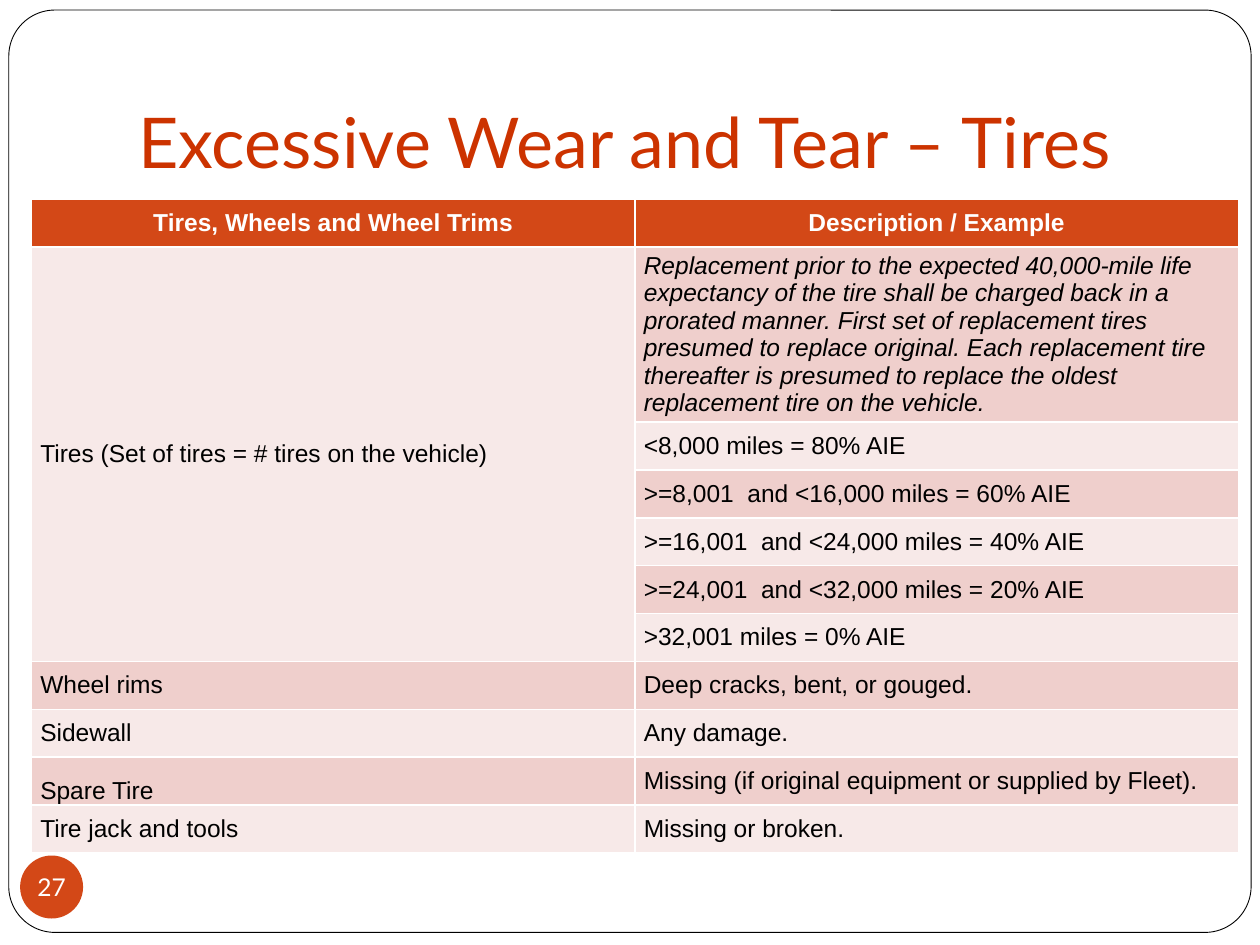
from dataclasses import dataclass

from pptx import Presentation
from pptx.dml.color import RGBColor
from pptx.enum.shapes import MSO_SHAPE
from pptx.enum.text import MSO_ANCHOR, PP_ALIGN
from pptx.util import Inches, Pt

ROUNDED, OVAL = MSO_SHAPE.ROUNDED_RECTANGLE, MSO_SHAPE.OVAL
MIDDLE, BOTTOM = MSO_ANCHOR.MIDDLE, MSO_ANCHOR.BOTTOM
LEFT, CENTER = PP_ALIGN.LEFT, PP_ALIGN.CENTER


@dataclass(frozen=True)
class Theme:
    white: RGBColor = RGBColor(0xFF, 0xFF, 0xFF)
    black: RGBColor = RGBColor(0, 0, 0)
    accent: RGBColor = RGBColor(0xD3, 0x48, 0x17)
    title: RGBColor = RGBColor(0xCC, 0x33, 0x00)
    dark_band: RGBColor = RGBColor(0xEF, 0xCF, 0xCC)
    light_band: RGBColor = RGBColor(0xF7, 0xE9, 0xE8)
    heading_font: str = "Lato"
    body_font: str = "Arial"
    title_size: int = 40
    body_size: int = 14


THEME = Theme()

HEADERS = ("Tires, Wheels and Wheel Trims", "Description / Example")
TIRES = "Tires (Set of tires = # tires on the vehicle)"
REPLACEMENT = (
    "Replacement prior to the expected 40,000-mile life expectancy of the tire "
    "shall be charged back in a prorated manner. First set of replacement tires "
    "presumed to replace original. Each replacement tire thereafter is presumed "
    "to replace the oldest replacement tire on the vehicle."
)
MILEAGE = (
    "<8,000 miles = 80% AIE",
    ">=8,001  and <16,000 miles = 60% AIE",
    ">=16,001  and <24,000 miles = 40% AIE",
    ">=24,001  and <32,000 miles = 20% AIE",
    ">32,001 miles = 0% AIE",
)
OTHER_PARTS = (
    ("Wheel rims", "Deep cracks, bent, or gouged."),
    ("Sidewall", "Any damage."),
    ("Spare Tire", "Missing (if original equipment or supplied by Fleet)."),
    ("Tire jack and tools", "Missing or broken."),
)


def write(tf, text, size, font, color, align=LEFT, bold=False, italic=False):
    p = tf.paragraphs[0]
    p.text = text
    p.alignment = align
    p.font.size = Pt(size)
    p.font.name = font
    p.font.color.rgb = color
    p.font.bold = bold
    p.font.italic = italic


def add_shape(s, kind, left, top, width, height, fill, line=None):
    sp = s.shapes.add_shape(kind, Inches(left), Inches(top), Inches(width), Inches(height))
    sp.shadow.inherit = False
    sp.fill.solid()
    sp.fill.fore_color.rgb = fill
    if line is None:
        sp.line.fill.background()
    else:
        sp.line.color.rgb = line
        sp.line.width = Pt(0.5)
    return sp


def add_frame(s):
    sp = add_shape(s, ROUNDED, 0.07, 0.08, 9.86, 7.32, THEME.white, THEME.black)
    sp.adjustments[0] = 0.05


def add_page_number(s, number):
    tf = add_shape(s, OVAL, 0.16, 6.79, 0.5, 0.5, THEME.accent).text_frame
    tf.margin_left = tf.margin_right = tf.margin_top = tf.margin_bottom = 0
    tf.vertical_anchor = MIDDLE
    tf.word_wrap = False
    write(tf, number, THEME.body_size, THEME.heading_font, THEME.white, CENTER)


def add_title(s, text):
    tf = s.shapes.add_textbox(Inches(1), Inches(0.3), Inches(8.5), Inches(1.25)).text_frame
    tf.word_wrap = True
    tf.vertical_anchor = BOTTOM
    tf.margin_bottom = Inches(0.1)
    write(tf, text, THEME.title_size, THEME.heading_font, THEME.title)


def fill_cell(cell, text, fill, color=THEME.black, anchor=MIDDLE, **style):
    cell.fill.solid()
    cell.fill.fore_color.rgb = fill
    cell.margin_left = cell.margin_right = Inches(0.07)
    cell.margin_top = cell.margin_bottom = 0
    cell.vertical_anchor = anchor
    write(cell.text_frame, text, THEME.body_size, THEME.body_font, color, **style)


def add_wear_table(s):
    """Add the table; its default style supplies the white cell borders."""
    tire_rows = [(TIRES, REPLACEMENT)] + [("", text) for text in MILEAGE]
    body = tire_rows + list(OTHER_PARTS)
    table = s.shapes.add_table(
        len(body) + 1, 2, Inches(0.25), Inches(1.58), Inches(9.58), Inches(5.18)
    ).table
    for row in table.rows:
        row.height = Inches(0.38)
    table.rows[1].height = Inches(1.39)

    for col, text in enumerate(HEADERS):
        fill_cell(table.cell(0, col), text, THEME.accent, THEME.white,
                  align=CENTER, bold=True)
    for row, texts in enumerate(body, 1):
        band = THEME.dark_band if row % 2 else THEME.light_band
        for col, text in enumerate(texts):
            in_tires = col == 0 and row <= len(tire_rows)
            fill_cell(table.cell(row, col), text,
                      THEME.light_band if in_tires else band,
                      anchor=BOTTOM if text == "Spare Tire" else MIDDLE,
                      italic=text == REPLACEMENT)
    table.cell(1, 0).merge(table.cell(len(tire_rows), 0))


def main():
    prs = Presentation()
    prs.slide_width, prs.slide_height = Inches(10), Inches(7.5)
    s = prs.slides.add_slide(prs.slide_layouts[6])
    add_frame(s)
    add_page_number(s, "27")
    add_wear_table(s)
    add_title(s, "Excessive Wear and Tear – Tires")
    prs.save("out.pptx")


if __name__ == "__main__":
    main()
